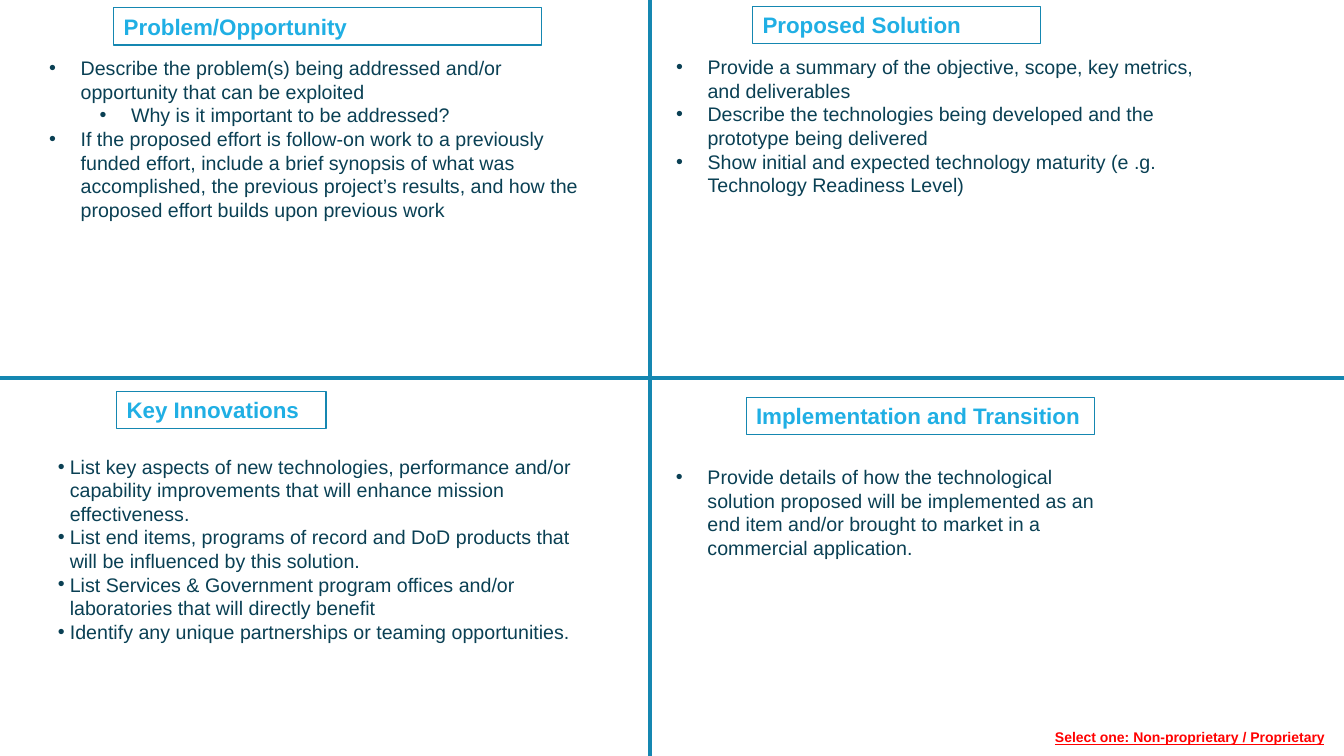
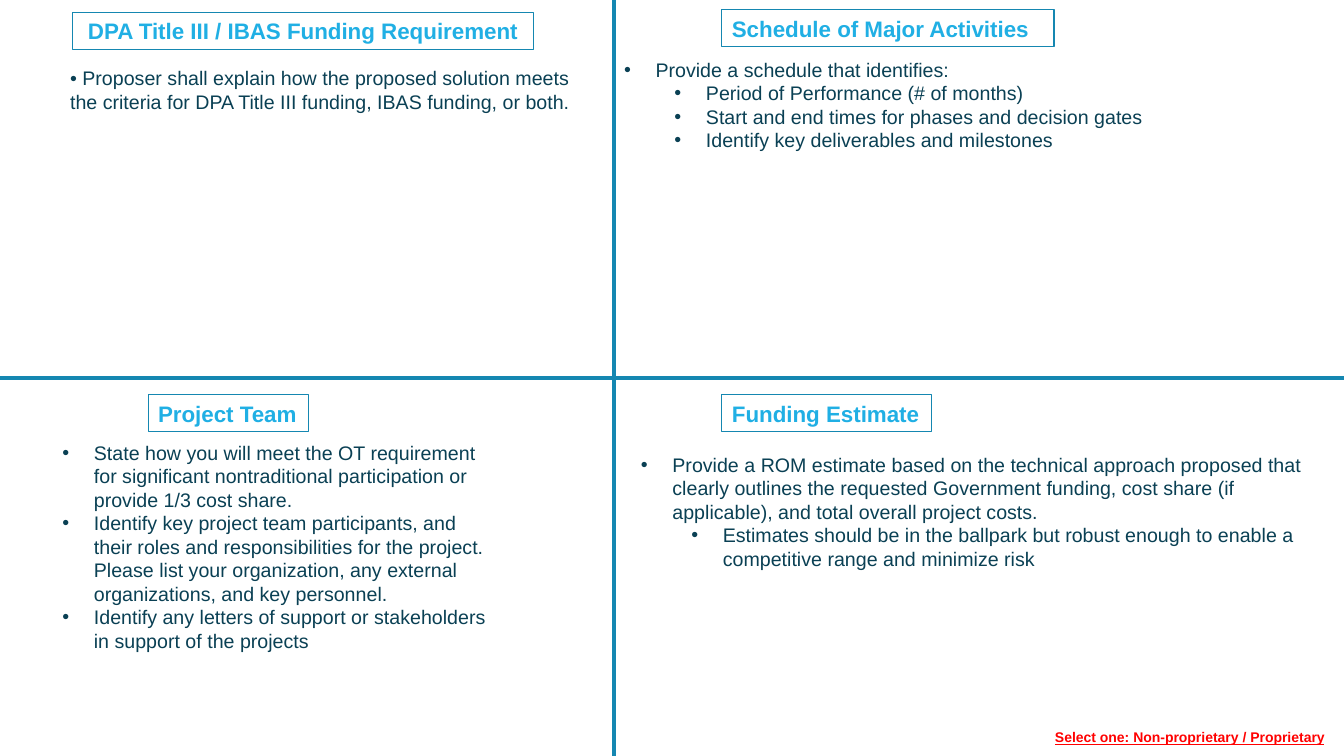
from dataclasses import dataclass

from lxml import etree
from pptx import Presentation
from pptx import util as u
from pptx.dml.color import RGBColor
from pptx.enum import shapes, text
from pptx.oxml.ns import qn

Pt = u.Pt
WIDTH, HEIGHT = 960, 540
FOOTER = "Select one: Non-proprietary / Proprietary"
LEFT, CENTER = text.PP_ALIGN.LEFT, text.PP_ALIGN.CENTER


@dataclass(frozen=True)
class Theme:
    font: str = "Arial"
    rule: RGBColor = RGBColor(0x15, 0x87, 0xB1)
    heading: RGBColor = RGBColor(0x20, 0xAF, 0xE4)
    body: RGBColor = RGBColor(0x0A, 0x40, 0x54)
    warning: RGBColor = RGBColor(0xFF, 0x00, 0x00)
    paper: RGBColor = RGBColor(0xFF, 0xFF, 0xFF)
    heading_size: int = 16
    body_size: int = 14
    footer_size: int = 10
    line_pitch: int = 17  # height of one line of body text


class QuadChart:
    """Draws four-quadrant slides, one at a time."""

    def __init__(self, presentation, theme):
        self.presentation = presentation
        self.theme = theme
        self.slide = None

    def new_slide(self, divider):
        self.slide = self.presentation.slides.add_slide(self.presentation.slide_layouts[6])
        self.rule(divider, 0, divider, HEIGHT)
        self.rule(0, HEIGHT / 2, WIDTH, HEIGHT / 2)

    def rule(self, *ends):
        line = self.slide.shapes.add_connector(
            shapes.MSO_CONNECTOR.STRAIGHT, *[Pt(end) for end in ends])
        line.line.color.rgb = self.theme.rule
        line.line.width = Pt(3)
        etree.SubElement(line._element.spPr, qn("a:effectLst"))

    def style(self, paragraph, size, color, **formats):
        formats = {"name": self.theme.font, "size": Pt(size), **formats}
        for name, value in formats.items():
            setattr(paragraph.font, name, value)
        paragraph.font.color.rgb = color

    def heading(self, words, left, top, width, align=LEFT):
        box = self.slide.shapes.add_shape(
            shapes.MSO_SHAPE.RECTANGLE, Pt(left), Pt(top), Pt(width), Pt(26.6))
        box.shadow.inherit = False
        box.fill.solid()
        box.fill.fore_color.rgb = self.theme.paper
        box.line.color.rgb = self.theme.rule
        box.line.width = Pt(0.75)
        box.text_frame.word_wrap = True
        paragraph = box.text_frame.paragraphs[0]
        paragraph.text = words
        paragraph.alignment = align
        self.style(paragraph, self.theme.heading_size, self.theme.heading, bold=True)

    def text_frame(self, left, top, width, height):
        box = self.slide.shapes.add_textbox(Pt(left), Pt(top), Pt(width), Pt(height))
        box.text_frame.word_wrap = True
        return box.text_frame

    def body(self, items, left, top, width, lines, hang=22.5):
        """Items are (level, words); a hang of 0 gives plain paragraphs."""
        frame = self.text_frame(left, top, width, lines * self.theme.line_pitch + 7.2)
        for index, (level, words) in enumerate(items):
            paragraph = frame.add_paragraph() if index else frame.paragraphs[0]
            paragraph.text = words
            paragraph.level = level
            if hang:
                self.bullet(paragraph, level * 36 + hang, hang)
            self.style(paragraph, self.theme.body_size, self.theme.body)

    def bullet(self, paragraph, margin, hang):
        properties = paragraph._p.get_or_add_pPr()
        properties.set("marL", str(Pt(margin)))
        properties.set("indent", str(-Pt(hang)))
        etree.SubElement(properties, qn("a:buFont")).set("typeface", self.theme.font)
        etree.SubElement(properties, qn("a:buChar")).set("char", "•")

    def footer(self):
        paragraph = self.text_frame(746.5, 517, 213.5, 19.4).paragraphs[0]
        paragraph.text = FOOTER
        self.style(paragraph, self.theme.footer_size, self.theme.warning,
                   bold=True, underline=True)


# Each slide: divider position and quadrants of (heading arguments, body arguments)
SLIDES = [
    (464.4, [
        (("Problem/Opportunity", 81.3, 5.6, 305.5),
         ([(0, "Describe the problem(s) being addressed and/or opportunity that can be exploited"),
           (1, "Why is it important to be addressed?"),
           (0, "If the proposed effort is follow-on work to a previously funded effort, "
               "include a brief synopsis of what was accomplished, the previous project’s "
               "results, and how the proposed effort builds upon previous work")],
          28, 36.7, 403, 7)),
        (("Proposed Solution", 537.6, 4.6, 206),
         ([(0, "Provide a summary of the objective, scope, key metrics, and deliverables"),
           (0, "Describe the technologies being developed and the prototype being delivered"),
           (0, "Show initial and expected technology maturity "
               "(e .g. Technology Readiness Level)")],
          475.8, 36, 397, 6)),
        (("Key Innovations", 83.3, 279.5, 149.6),
         ([(0, "List key aspects of new technologies, performance and/or capability "
               "improvements that will enhance mission effectiveness."),
           (0, "List end items, programs of record and DoD products that will be "
               "influenced by this solution."),
           (0, "List Services & Government program offices and/or laboratories that "
               "will directly benefit"),
           (0, "Identify any unique partnerships or teaming opportunities.")],
          34.3, 321.3, 397, 8, 8.5)),
        (("Implementation and Transition", 533, 283.7, 249),
         ([(0, "Provide details of how the technological solution proposed will be "
               "implemented as an end item and/or brought to market in a commercial "
               "application.")],
          475.8, 328.5, 324, 4)),
    ]),
    (438.5, [
        (("DPA Title III / IBAS Funding Requirement", 51.6, 8.8, 329.8, CENTER),
         ([(0, "• Proposer shall explain how the proposed solution meets the criteria for "
               "DPA Title III funding, IBAS funding, or both.")],
          43, 43.5, 393, 2, 0)),
        (("Schedule of Major Activities", 515.7, 6.8, 237.2),
         ([(0, "Provide a schedule that identifies:"),
           (1, "Period of Performance (# of months)"),
           (1, "Start and end times for phases and decision gates"),
           (1, "Identify key deliverables and milestones")],
          438.7, 37.7, 387.5, 4)),
        (("Project Team", 105.8, 282, 114.5),
         ([(0, "State how you will meet the OT requirement for significant nontraditional "
               "participation or provide 1/3 cost share."),
           (0, "Identify key project team participants, and their roles and "
               "responsibilities for the project. Please list your organization, any "
               "external organizations, and key personnel."),
           (0, "Identify any letters of support or stakeholders in support of the projects")],
          37.5, 311.2, 324, 9)),
        (("Funding Estimate", 515.7, 282, 149.8),
         ([(0, "Provide a ROM estimate based on the technical approach proposed that "
               "clearly outlines the requested Government funding, cost share (if "
               "applicable), and total overall project costs."),
           (1, "Estimates should be in the ballpark but robust enough to enable a "
               "competitive range and minimize risk")],
          450.7, 319.8, 500.4, 5)),
    ]),
]


def main():
    presentation = Presentation()
    presentation.slide_width, presentation.slide_height = Pt(WIDTH), Pt(HEIGHT)
    chart = QuadChart(presentation, Theme())
    for divider, quadrants in SLIDES:
        chart.new_slide(divider)
        for heading, body in quadrants:
            chart.heading(*heading)
            chart.body(*body)
        chart.footer()
    presentation.save("out.pptx")


if __name__ == "__main__":
    main()
